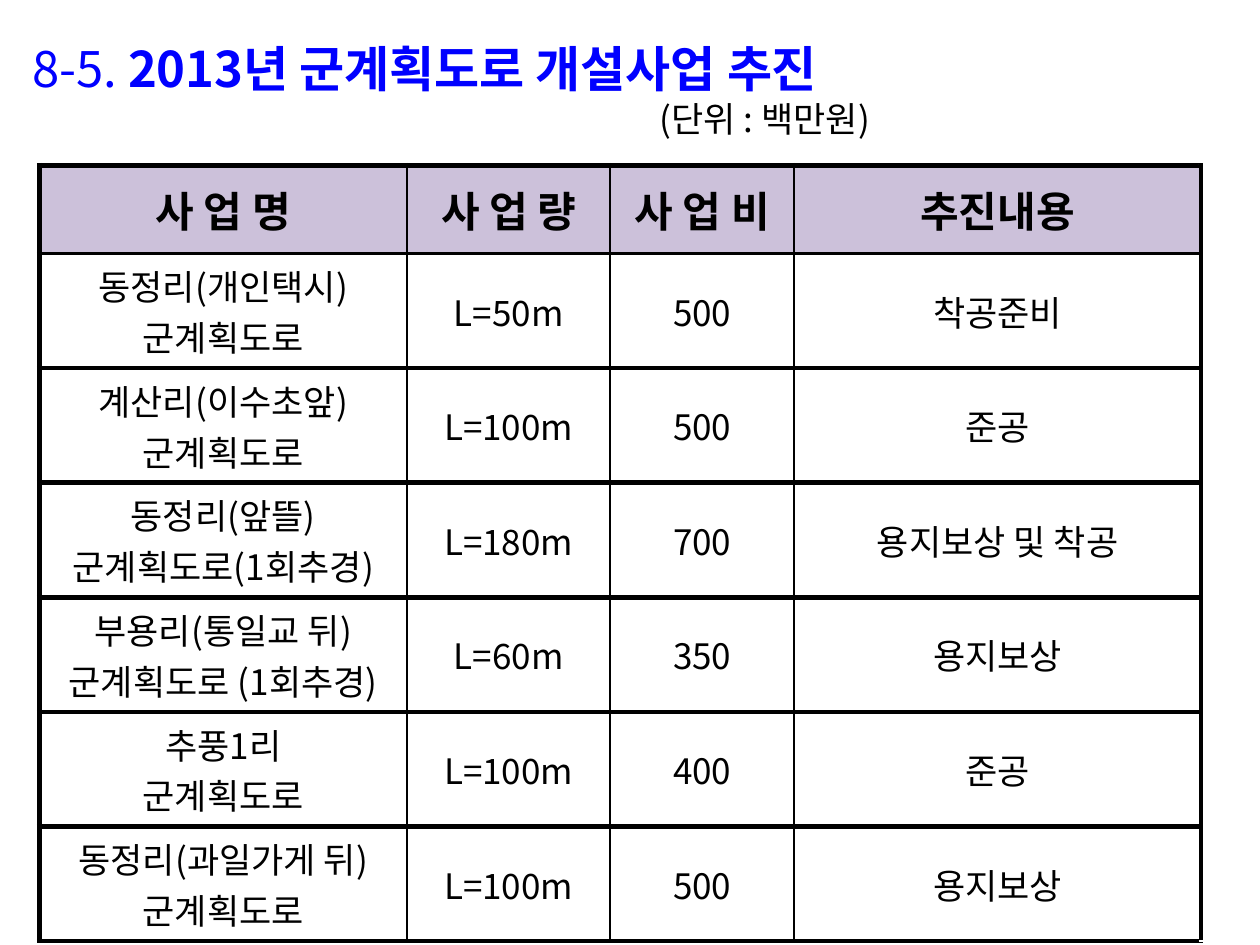
import pptx
import pptx.dml.color
import pptx.enum.text
import pptx.oxml.ns
import pptx.util
from lxml import etree
from pptx.util import Cm, Pt

FONT = "Noto Sans CJK KR"
BLACK, BLUE, LILAC = "000000", "0000FF", "CCC1DA"
THIN, THICK = 1.41, 3
CENTER = pptx.enum.text.PP_ALIGN.CENTER
MIDDLE = pptx.enum.text.MSO_ANCHOR.MIDDLE

COLUMN_WIDTHS = [7.42, 4.09, 3.71, 8.2]
MARGIN_WIDTH = 0.79
HEADER_HEIGHT, PROJECT_HEIGHT = 1.78, 2.31
HEADINGS = ["사 업 명", "사 업 량", "사 업 비", "추진내용"]
PROJECTS = [
    ["동정리(개인택시) 군계획도로", "L=50m", "500", "착공준비"],
    ["계산리(이수초앞) 군계획도로", "L=100m", "500", "준공"],
    ["동정리(앞뜰) 군계획도로(1회추경)", "L=180m", "700", "용지보상 및 착공"],
    ["부용리(통일교 뒤)\n군계획도로 (1회추경)", "L=60m", "350", "용지보상"],
    ["추풍1리\n군계획도로", "L=100m", "400", "준공"],
    ["동정리(과일가게 뒤)\n군계획도로", "L=100m", "500", "용지보상"],
]


def color(hex_string):
    return pptx.dml.color.RGBColor.from_string(hex_string)


def add_run(paragraph, text, size=20, bold=False, fill=BLACK):
    run = paragraph.add_run()
    run.text = text
    run.font.size = Pt(size)
    run.font.bold = bold
    run.font.name = FONT
    run.font.color.rgb = color(fill)
    east_asian = etree.SubElement(run.font._element, pptx.oxml.ns.qn("a:ea"))
    east_asian.set("typeface", FONT)


def set_borders(cell, **widths):
    """Draw black cell edges; widths maps L, R, T, B to points."""
    properties = cell._tc.get_or_add_tcPr()
    for position, side in enumerate(s for s in "LRTB" if s in widths):
        line = etree.Element(pptx.oxml.ns.qn(f"a:ln{side}"), w=str(int(Pt(widths[side]))))
        solid = etree.SubElement(line, pptx.oxml.ns.qn("a:solidFill"))
        etree.SubElement(solid, pptx.oxml.ns.qn("a:srgbClr"), val=BLACK)
        properties.insert(position, line)


def add_heading(slide, left, top, width, height):
    box = slide.shapes.add_textbox(Cm(left), Cm(top), Cm(width), Cm(height))
    frame = box.text_frame
    frame.word_wrap = True
    title = frame.paragraphs[0]
    add_run(title, "8-5. ", size=28, fill=BLUE)
    add_run(title, "2013년 군계획도로 개설사업 추진", size=28, bold=True, fill=BLUE)
    unit = frame.add_paragraph()
    unit._p.get_or_add_pPr().set("marL", str(int(Cm(12.65))))
    add_run(unit, "(단위 : 백만원)")


def add_project_table(slide, left, top):
    rows = [HEADINGS] + PROJECTS
    widths = COLUMN_WIDTHS + [MARGIN_WIDTH]
    heights = [HEADER_HEIGHT] + [PROJECT_HEIGHT] * len(PROJECTS)
    table = slide.shapes.add_table(
        len(rows), len(widths), Cm(left), Cm(top), Cm(sum(widths)), Cm(sum(heights))
    ).table
    table.first_row = table.horz_banding = False
    for column, width in zip(table.columns, widths):
        column.width = Cm(width)
    for row, height in zip(table.rows, heights):
        row.height = Cm(height)

    last = len(HEADINGS) - 1
    for r, values in enumerate(rows):
        is_header = r == 0
        for c, value in enumerate(values):
            cell = table.cell(r, c)
            cell.vertical_anchor = MIDDLE
            if is_header:
                cell.fill.solid()
                cell.fill.fore_color.rgb = color(LILAC)
            else:
                cell.fill.background()
            set_borders(
                cell,
                L=THICK if c == 0 else THIN,
                R=THICK if c == last else THIN,
                T=THIN if r == 1 else THICK,
                B=THIN if is_header else THICK,
            )
            for i, line in enumerate(value.split("\n")):
                frame = cell.text_frame
                paragraph = frame.add_paragraph() if i else frame.paragraphs[0]
                paragraph.alignment = CENTER
                add_run(paragraph, line, size=24 if is_header else 20, bold=is_header)

    margin = table.cell(0, last + 1)
    margin.merge(table.cell(len(rows) - 1, last + 1))
    for r in range(len(rows)):
        cell = table.cell(r, last + 1)
        cell.fill.background()
        set_borders(cell, L=THICK)


def main():
    presentation = pptx.Presentation()
    presentation.slide_width, presentation.slide_height = Cm(25.4), Cm(19.05)
    slide = presentation.slides.add_slide(presentation.slide_layouts[6])
    add_project_table(slide, 0.79, 3.33)
    add_heading(slide, 0.4, 0.66, 24, 2.74)
    presentation.save("out.pptx")


if __name__ == "__main__":
    main()
